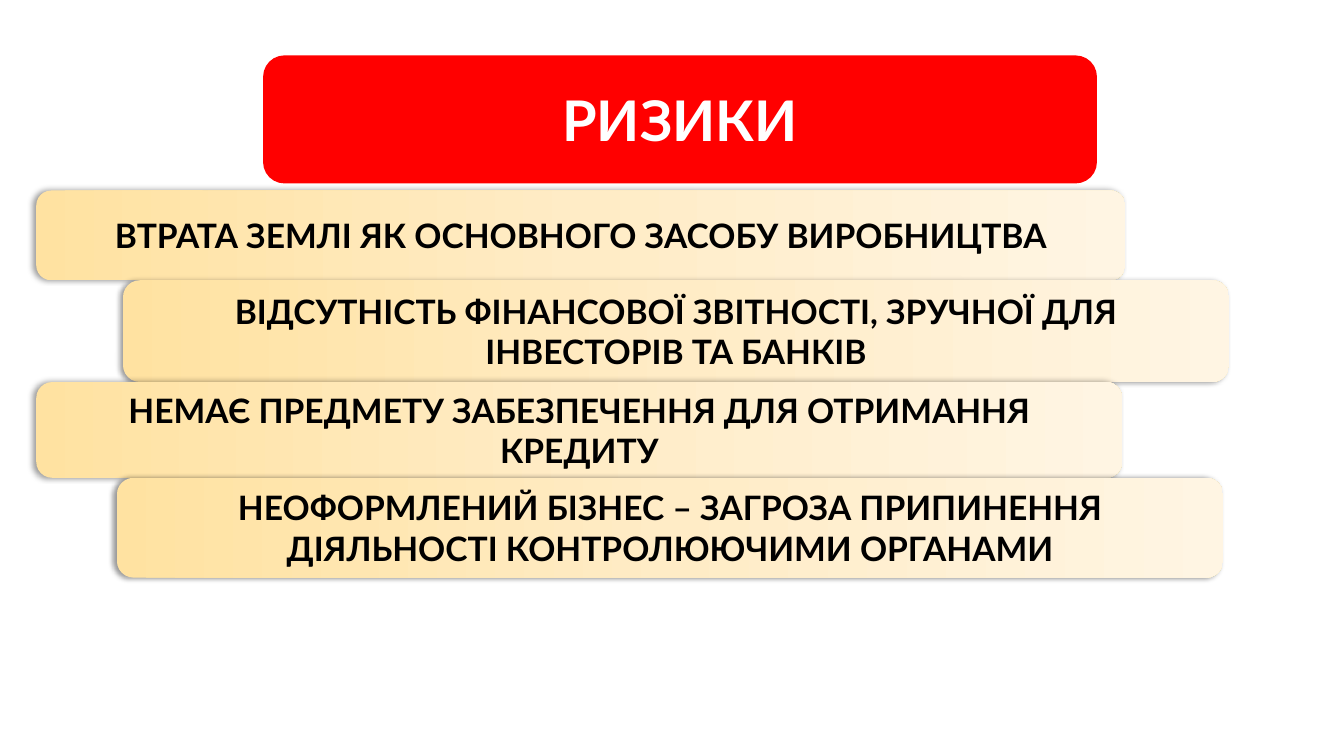
from copy import deepcopy
from typing import NamedTuple

from lxml.etree import SubElement
from pptx import Presentation
from pptx.dml.color import RGBColor
from pptx.enum.shapes import MSO_SHAPE
from pptx.enum.text import MSO_ANCHOR, PP_ALIGN
from pptx.oxml.ns import qn
from pptx.shapes.autoshape import Shape
from pptx.slide import Slide
from pptx.util import Emu, Pt

PX = 9144  # 100 px to the inch
RED = RGBColor(0xFF, 0x00, 0x00)
WHITE = RGBColor(0xFF, 0xFF, 0xFF)
BLACK = RGBColor(0x00, 0x00, 0x00)
CREAM = (
    RGBColor(0xFF, 0xE2, 0xA1),
    RGBColor(0xFF, 0xEC, 0xC6),
    RGBColor(0xFF, 0xF5, 0xE3),
)
TOP = 189


class Risk(NamedTuple):
    left: int
    width: int
    height: int
    text: str


RISKS = [
    Risk(36, 1080, 89, "ВТРАТА ЗЕМЛІ ЯК ОСНОВНОГО ЗАСОБУ ВИРОБНИЦТВА"),
    Risk(122, 1097, 101,
         "ВІДСУТНІСТЬ ФІНАНСОВОЇ ЗВІТНОСТІ, ЗРУЧНОЇ ДЛЯ ІНВЕСТОРІВ ТА БАНКІВ"),
    Risk(36, 1077, 95, "НЕМАЄ ПРЕДМЕТУ ЗАБЕЗПЕЧЕННЯ ДЛЯ ОТРИМАННЯ КРЕДИТУ"),
    Risk(116, 1097, 99,
         "НЕОФОРМЛЕНИЙ БІЗНЕС – ЗАГРОЗА ПРИПИНЕННЯ "
         "ДІЯЛЬНОСТІ КОНТРОЛЮЮЧИМИ ОРГАНАМИ"),
]


def px(count: int) -> Emu:
    return Emu(count * PX)


def add_box(slide: Slide, item: Risk, top: int, size: int, ink: RGBColor) -> Shape:
    """Add a rounded box with bold centred text; the caller fills it."""
    box = slide.shapes.add_shape(
        MSO_SHAPE.ROUNDED_RECTANGLE,
        px(item.left), px(top), px(item.width), px(item.height))
    box.shadow.inherit = False
    box.line.fill.background()
    frame = box.text_frame
    frame.word_wrap = True
    frame.vertical_anchor = MSO_ANCHOR.MIDDLE
    frame.text = item.text
    line = frame.paragraphs[0]
    line.alignment = PP_ALIGN.CENTER
    font = line.runs[0].font
    font.name, font.size, font.bold = "Lato", Pt(size), True
    font.color.rgb = ink
    return box


def fill_cream(box: Shape) -> None:
    box.fill.gradient()
    box.fill.gradient_angle = 0
    first = box._element.spPr.find(".//" + qn("a:gs"))
    first.addnext(deepcopy(first))
    for index, (stop, color) in enumerate(zip(box.fill.gradient_stops, CREAM)):
        stop.position = index / 2
        stop.color.rgb = color


def add_shadow(box: Shape) -> None:
    """Cast a soft black shadow to the left."""
    effects = box._element.spPr.find(qn("a:effectLst"))
    shadow = SubElement(
        effects, qn("a:outerShdw"), blurRad=str(Pt(4)), dist=str(Pt(3)),
        dir=str(180 * 60000), algn="ctr", rotWithShape="0")
    color = SubElement(shadow, qn("a:srgbClr"), val=str(BLACK))
    SubElement(color, qn("a:alpha"), val="40000")


def main() -> None:
    deck = Presentation()
    deck.slide_width, deck.slide_height = px(1333), px(750)
    slide = deck.slides.add_slide(deck.slide_layouts[6])

    title = add_box(slide, Risk(261, 827, 127, "РИЗИКИ"), 55, 40, WHITE)
    title.fill.solid()
    title.fill.fore_color.rgb = RED

    top = TOP
    for risk in RISKS:
        box = add_box(slide, risk, top, 24, BLACK)
        fill_cream(box)
        add_shadow(box)
        top += risk.height

    deck.save("out.pptx")


if __name__ == "__main__":
    main()
